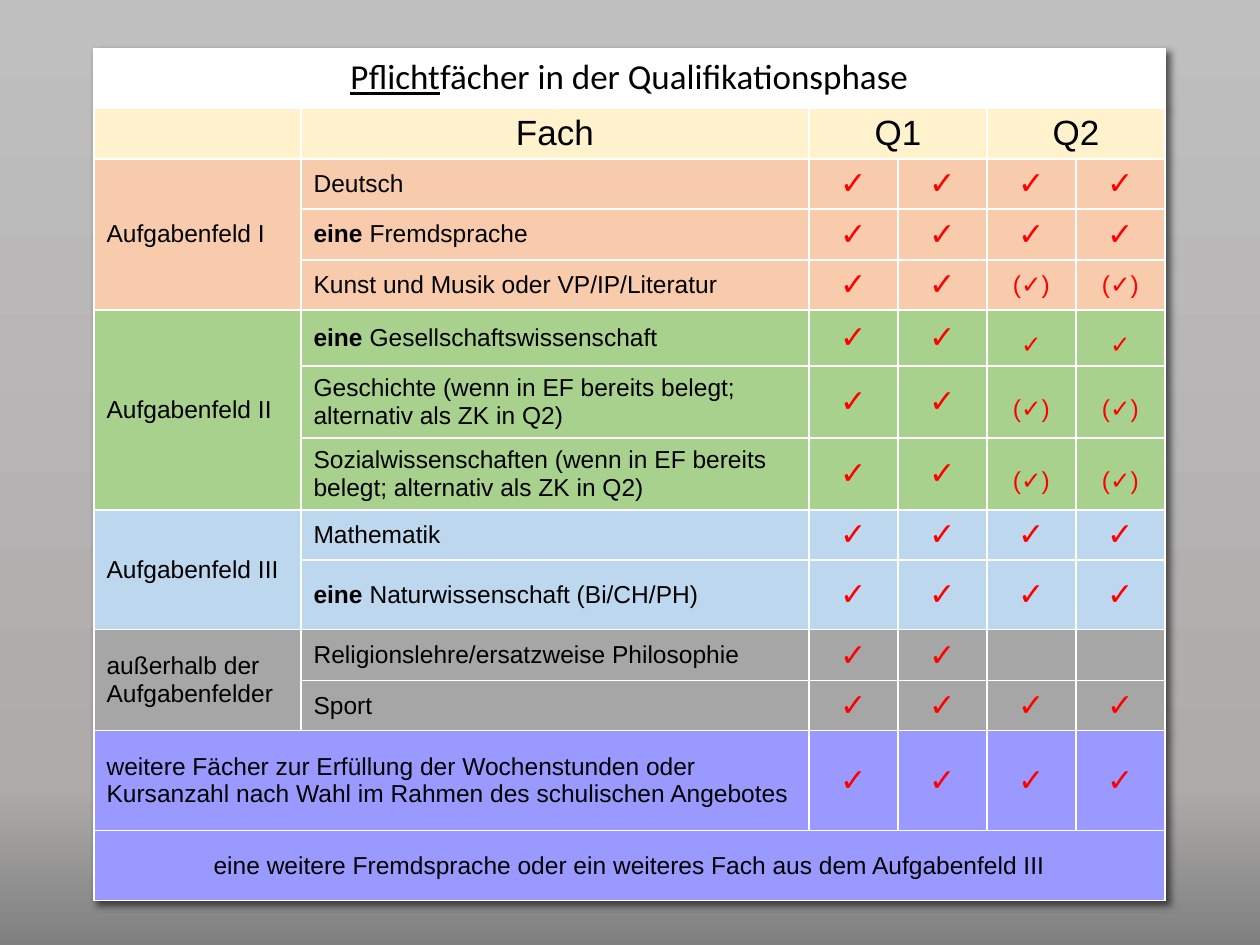
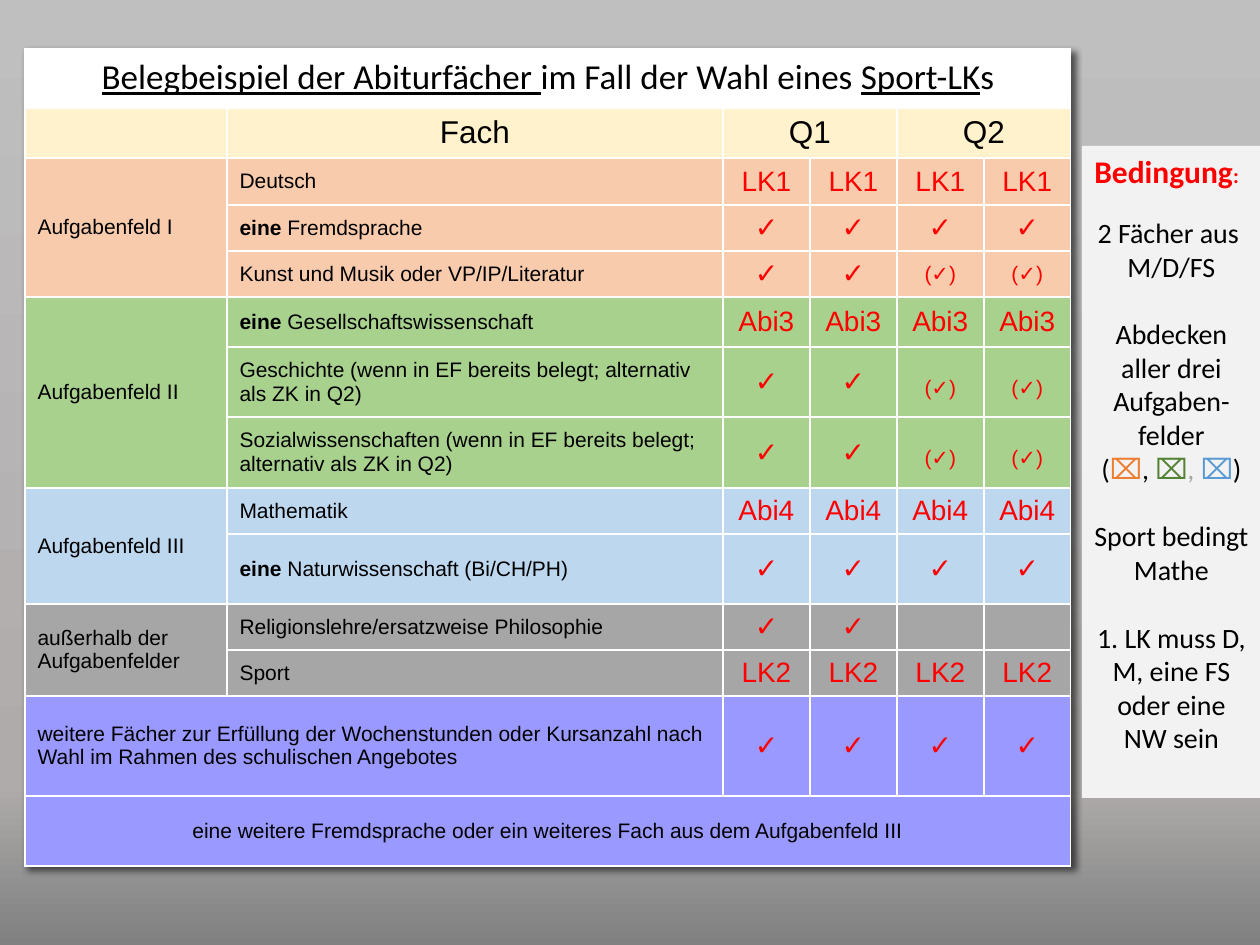
"""Build two slides with tables of compulsory subjects in the qualification phase."""
from lxml import etree
from pptx import Presentation
from pptx import util as u
from pptx.dml.color import RGBColor
from pptx.enum import shapes, text
from pptx.oxml import ns

PX = 914400 // 126
BLACK, RED, WHITE = "000000", "FF0000", "FFFFFF"
CREAM, PEACH, GREEN, BLUE, GREY, VIOLET = "FFF2CC", "F8CBAD", "A9D18E", "BDD7EE", "A6A6A6", "9999FF"
LEFT, CENTER = text.PP_ALIGN.LEFT, text.PP_ALIGN.CENTER
FIRST_SUBJECT, LAST_ROW = 2, 13

subjects = [
    ("Deutsch", PEACH, "✓"),
    ("|eine |Fremdsprache", PEACH, "✓"),
    ("Kunst und Musik oder VP/IP/Literatur", PEACH, "(✓)"),
    ("|eine |Gesellschaftswissenschaft", GREEN, "✓"),
    ("Geschichte (wenn in EF bereits belegt; alternativ als ZK in Q2)", GREEN, "(✓)"),
    ("Sozialwissenschaften (wenn in EF bereits belegt; alternativ als ZK in Q2)", GREEN, "(✓)"),
    ("Mathematik", BLUE, "✓"),
    ("|eine| Naturwissenschaft (Bi/CH/PH)", BLUE, "✓"),
    ("Religionslehre/ersatzweise Philosophie", GREY, ""),
    ("Sport", GREY, "✓"),
    ("", VIOLET, "✓"),
]
fields = {2: "Aufgabenfeld I", 5: "Aufgabenfeld II", 8: "Aufgabenfeld III",
          10: "außerhalb der Aufgabenfelder",
          12: "weitere Fächer zur Erfüllung der Wochenstunden oder Kursanzahl "
              "nach Wahl im Rahmen des schulischen Angebotes"}
merges = [(0, 0, 0, 5), (1, 2, 1, 3), (1, 4, 1, 5), (2, 0, 4, 0), (5, 0, 7, 0),
          (8, 0, 9, 0), (10, 0, 11, 0), (12, 0, 12, 1), (13, 0, 13, 5)]
plans = [
    dict(title="|Pflicht|fächer in der Qualifikationsphase", left=94,
         columns=[207, 508] + [89] * 4, header=20, mark=18, body=14, exams={},
         rows=[58, 52, 50, 51, 50, 56, 72, 72, 50, 70, 51, 50, 100, 70]),
    dict(title="|Belegbeispiel der Abiturfächer |im Fall der Wahl eines |Sport-LK|s", left=25,
         columns=[202, 496] + [87] * 4, header=18, mark=16, body=12,
         exams={2: "LK1", 5: "Abi3", 8: "Abi4", 11: "LK2"},
         rows=[58, 51, 47, 46, 46, 50, 70, 71, 46, 70, 46, 46, 100, 70]),
]


def color(value):
    return RGBColor.from_string(value)


def write(para, words, size, hue=BLACK, align=LEFT, face="Arial", emphasis="bold"):
    """Fill a paragraph; parts between bars are emphasised."""
    para.alignment = align
    para.font.size, para.font.name = u.Pt(size), face
    para.font.color.rgb = color(hue)
    for number, part in enumerate(words.split("|")):
        if part:
            span = para.add_run()
            span.text = part
            if number % 2:
                setattr(span.font, emphasis, True)
    if not words:
        etree.SubElement(para._p, ns.qn("a:endParaRPr"), sz=str(size * 100))


deck = Presentation()
deck.slide_width, deck.slide_height = 1260 * PX, 945 * PX
backdrop = deck.slide_master.background.fill
backdrop.gradient()
backdrop.gradient_angle = 270
stops = deck.slide_master._element.find(".//" + ns.qn("a:gsLst"))
for stop in list(stops):
    stops.remove(stop)
for place, hue in [(0, "BFBFBF"), (83, "AFABAB"), (100, "808080")]:
    stop = etree.SubElement(stops, ns.qn("a:gs"), pos=str(place * 1000))
    etree.SubElement(stop, ns.qn("a:srgbClr"), val=hue)

for plan in plans:
    page = deck.slides.add_slide(deck.slide_layouts[6])
    frame = page.shapes.add_table(len(plan["rows"]), len(plan["columns"]), plan["left"] * PX, 49 * PX,
                                  sum(plan["columns"]) * PX, sum(plan["rows"]) * PX)
    table = frame.table
    table.first_row = table.horz_banding = False
    effects = etree.Element(ns.qn("a:effectLst"))
    shadow = etree.SubElement(effects, ns.qn("a:outerShdw"), blurRad="50800", dist="38100", dir="2700000")
    shade = etree.SubElement(shadow, ns.qn("a:srgbClr"), val=BLACK)
    etree.SubElement(shade, ns.qn("a:alpha"), val="60000")
    table._tbl.tblPr.insert(0, effects)
    for column, width in zip(table.columns, plan["columns"]):
        column.width = width * PX
    for row, height in zip(table.rows, plan["rows"]):
        row.height = height * PX
    for top, left, bottom, right in merges:
        table.cell(top, left).merge(table.cell(bottom, right))

    for r in range(len(plan["rows"])):
        for c in range(len(plan["columns"])):
            cell = table.cell(r, c)
            para = cell.text_frame.paragraphs[0]
            cell.vertical_anchor = text.MSO_ANCHOR.MIDDLE
            for side in ("L", "R", "T", "B"):
                weight = 3 if r == 0 and side == "B" else 1
                line = etree.SubElement(cell._tc.get_or_add_tcPr(), ns.qn("a:ln" + side), w=str(u.Pt(weight)))
                paint = etree.SubElement(line, ns.qn("a:solidFill"))
                etree.SubElement(paint, ns.qn("a:srgbClr"), val=WHITE)
            if r == 0:
                fill = WHITE
            elif r == 1:
                fill = CREAM
            elif r == LAST_ROW:
                fill = VIOLET
            else:
                subject, fill, second_year = subjects[r - FIRST_SUBJECT]
            cell.fill.solid()
            cell.fill.fore_color.rgb = color(fill)

            if cell.is_spanned:
                write(para, "", plan["body"])
            elif r == 0:
                write(para, plan["title"], 20, align=CENTER, face="Calibri", emphasis="underline")
            elif r == 1:
                write(para, ["", "Fach", "Q1", "", "Q2", ""][c], plan["header"], align=CENTER)
            elif r == LAST_ROW:
                write(para, "eine weitere Fremdsprache oder ein weiteres Fach aus dem Aufgabenfeld III",
                      plan["body"], align=CENTER)
            elif c < 2:
                write(para, subject if c else fields[r], plan["body"])
            else:
                exam = plan["exams"].get(r)
                small = c > 3 and 4 <= r <= 7 and not exam
                mark = exam or (second_year if c > 3 else "✓")
                write(para, mark, plan["body" if small else "mark"], RED, CENTER)
                if small and fill == GREEN:
                    para.line_spacing = 1.5

box = page.shapes.add_shape(shapes.MSO_SHAPE.RECTANGLE, 1082 * PX, 146 * PX, 179 * PX, 652 * PX)
box.shadow.inherit = False
box.fill.solid()
box.fill.fore_color.rgb = color("F2F2F2")
box.line.fill.background()
box.text_frame.word_wrap = True
box.text_frame.vertical_anchor = text.MSO_ANCHOR.TOP
heading = box.text_frame.paragraphs[0]
write(heading, "|Bedingung|", 18, RED, face="Calibri")
colon = heading.add_run()
colon.text = ":"
colon.font.size, colon.font.bold = u.Pt(12), True

conditions = [("2 Fächer aus ", 14.6), ("M/D/FS", 0), ("Abdecken aller drei Aufgaben-felder", 19.5),
              ("(", 0), ("Sport bedingt ", 19.5), ("Mathe", 0),
              ("1. LK muss D, M, eine FS oder eine NW sein", 19.5)]
for words, gap in conditions:
    para = box.text_frame.add_paragraph()
    para.space_before = u.Pt(gap)
    write(para, words, 16, align=CENTER, face="Calibri")
    if words == "(":
        for part, hue in [("⌧", "ED7D31"), (", ", BLACK), ("⌧", "548235"),
                          (", ", "A5A5A5"), ("⌧", "5B9BD5"), (")", BLACK)]:
            span = para.add_run()
            span.text = part
            span.font.color.rgb = color(hue)

deck.save("out.pptx")
